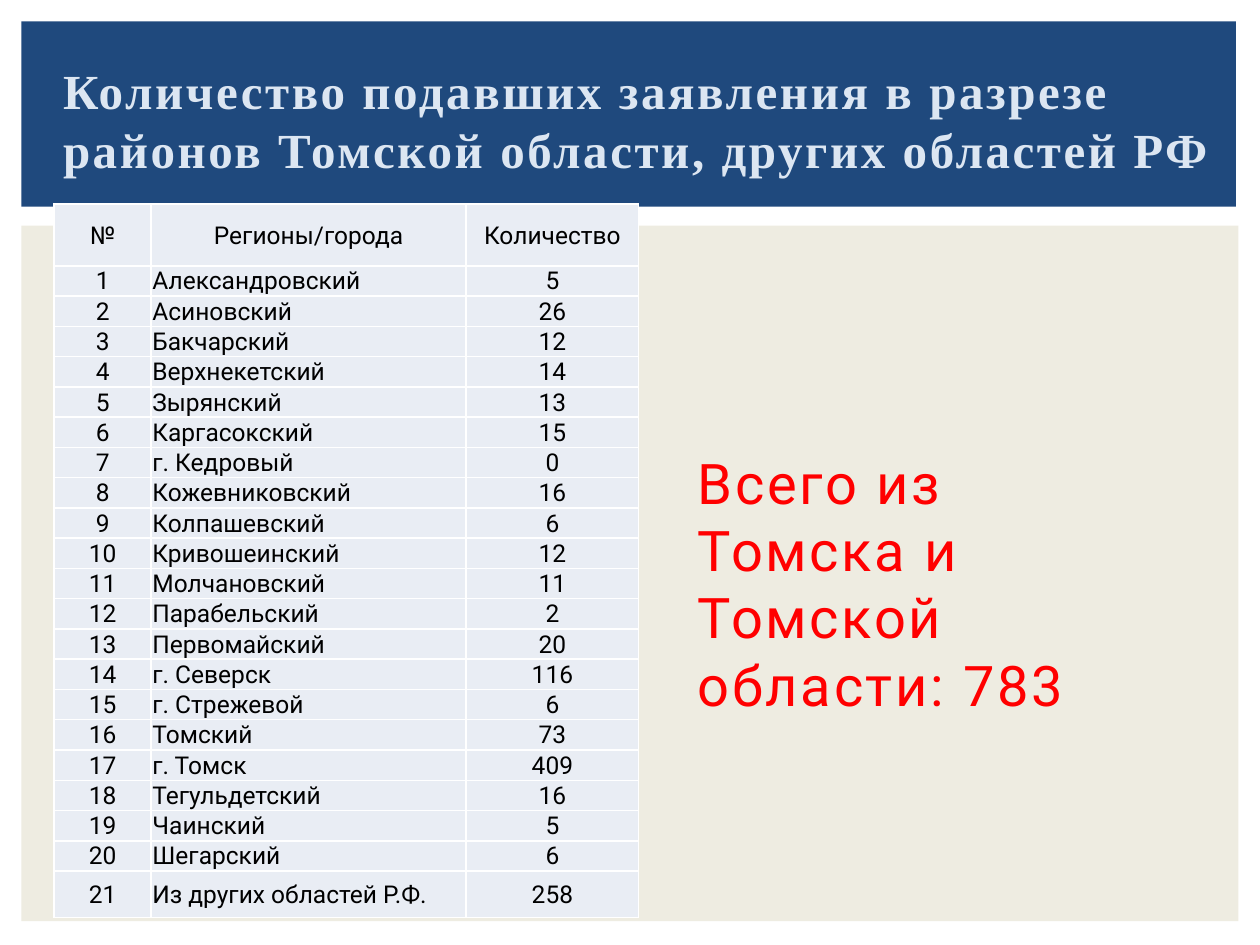
from lxml.etree import SubElement
from pptx import Presentation
from pptx.dml.color import RGBColor
from pptx.enum.shapes import MSO_SHAPE
from pptx.enum.text import MSO_ANCHOR, MSO_AUTO_SIZE, PP_ALIGN
from pptx.oxml import parse_xml
from pptx.oxml.ns import nsdecls, qn
from pptx.util import Inches, Pt

COLORS = {
    "page": "FFFFFF",
    "panel": "EEECE1",
    "banner": "1F497D",
    "heading": "DCE6F2",
    "cell": "E9EDF4",
    "border": "FFFFFF",
    "text": "000000",
    "total": "FF0000",
}

HEADING = "Количество подавших заявления в разрезе районов Томской области, других областей РФ"
TOTAL = "Всего из Томска и Томской области: 783"
HEADER = ("№", "Регионы/города", "Количество")
APPLICANTS = [
    ("Александровский", 5),
    ("Асиновский", 26),
    ("Бакчарский", 12),
    ("Верхнекетский", 14),
    ("Зырянский", 13),
    ("Каргасокский", 15),
    ("г. Кедровый", 0),
    ("Кожевниковский", 16),
    ("Колпашевский", 6),
    ("Кривошеинский", 12),
    ("Молчановский", 11),
    ("Парабельский", 2),
    ("Первомайский", 20),
    ("г. Северск", 116),
    ("г. Стрежевой", 6),
    ("Томский", 73),
    ("г. Томск", 409),
    ("Тегульдетский", 16),
    ("Чаинский", 5),
    ("Шегарский", 6),
    ("Из других областей Р.Ф.", 258),
]


def rgb(name):
    return RGBColor.from_string(COLORS[name])


def style_paragraph(paragraph, font_name, size, color, bold=False, align=PP_ALIGN.LEFT):
    paragraph.alignment = align
    font = paragraph.font
    font.name = font_name
    font.size = Pt(size)
    font.bold = bold
    font.color.rgb = rgb(color)


def space_letters(paragraph, indent):
    properties = paragraph._p.get_or_add_pPr()
    properties.set("marL", str(Inches(indent)))
    properties.set("indent", "0")
    properties.get_or_add_defRPr().set("spc", "150")
    for run in paragraph.runs:
        run._r.get_or_add_rPr().set("spc", "150")


def add_block(slide, box, color):
    block = slide.shapes.add_shape(MSO_SHAPE.RECTANGLE, *map(Inches, box))
    block.shadow.inherit = False
    block.fill.solid()
    block.fill.fore_color.rgb = rgb(color)
    block.line.fill.background()


def place_heading(slide, box):
    heading = slide.shapes.title
    slide.shapes._spTree.append(heading._element)
    heading.left, heading.top, heading.width, heading.height = map(Inches, box)
    frame = heading.text_frame
    frame.text = HEADING
    frame.word_wrap = True
    frame.auto_size = MSO_AUTO_SIZE.NONE
    frame.vertical_anchor = MSO_ANCHOR.MIDDLE
    style_paragraph(frame.paragraphs[0], "Times New Roman", 28, "heading", bold=True)
    space_letters(frame.paragraphs[0], 0.12)


def set_borders(cell):
    properties = cell._tc.get_or_add_tcPr()
    for position, side in enumerate(("lnL", "lnR", "lnT", "lnB")):
        border = parse_xml(f'<a:{side} {nsdecls("a")} w="{Pt(1)}"/>')
        fill = SubElement(border, qn("a:solidFill"))
        SubElement(fill, qn("a:srgbClr")).set("val", COLORS["border"])
        properties.insert(position, border)


def fill_cell(cell, text, align):
    cell.text = text
    cell.vertical_anchor = MSO_ANCHOR.MIDDLE
    cell.margin_left = cell.margin_right = cell.margin_top = Inches(0.01)
    cell.margin_bottom = 0
    cell.fill.solid()
    cell.fill.fore_color.rgb = rgb("cell")
    style_paragraph(cell.text_frame.paragraphs[0], "Roboto", 14, "text", align=align)
    set_borders(cell)


def add_applicants_table(slide, box):
    rows = [HEADER] + [
        (str(number), region, str(count))
        for number, (region, count) in enumerate(APPLICANTS, 1)
    ]
    table = slide.shapes.add_table(len(rows), len(HEADER), *map(Inches, box)).table
    table.first_row = False
    table.horz_banding = False
    for column, width in zip(table.columns, (0.77, 2.5, 1.37)):
        column.width = Inches(width)
    heights = [0.49] + [0.24] * (len(rows) - 2) + [0.37]
    for row_index, (row, height) in enumerate(zip(rows, heights)):
        table.rows[row_index].height = Inches(height)
        for column_index, text in enumerate(row):
            is_region = row_index > 0 and column_index == 1
            align = PP_ALIGN.LEFT if is_region else PP_ALIGN.CENTER
            fill_cell(table.cell(row_index, column_index), text, align)


def add_total(slide, box):
    frame = slide.shapes.add_textbox(*map(Inches, box)).text_frame
    frame.word_wrap = True
    frame.text = TOTAL
    style_paragraph(frame.paragraphs[0], "Roboto", 32, "total")
    space_letters(frame.paragraphs[0], 0.05)


def build_applicants_slide(deck):
    slide = deck.slides.add_slide(deck.slide_layouts[5])
    slide.background.fill.solid()
    slide.background.fill.fore_color.rgb = rgb("page")
    add_block(slide, (0.17, 1.79, 9.66, 5.52), "panel")
    add_block(slide, (0.17, 0.17, 9.64, 1.47), "banner")
    place_heading(slide, (0.28, 0.26, 9.45, 1.37))
    add_applicants_table(slide, (0.43, 1.62, 4.64, 5.66))
    add_total(slide, (5.39, 3.51, 3.8, 1.81))


def main():
    deck = Presentation()
    deck.slide_width = Inches(10)
    deck.slide_height = Inches(7.5)
    build_applicants_slide(deck)
    deck.save("out.pptx")


if __name__ == "__main__":
    main()
